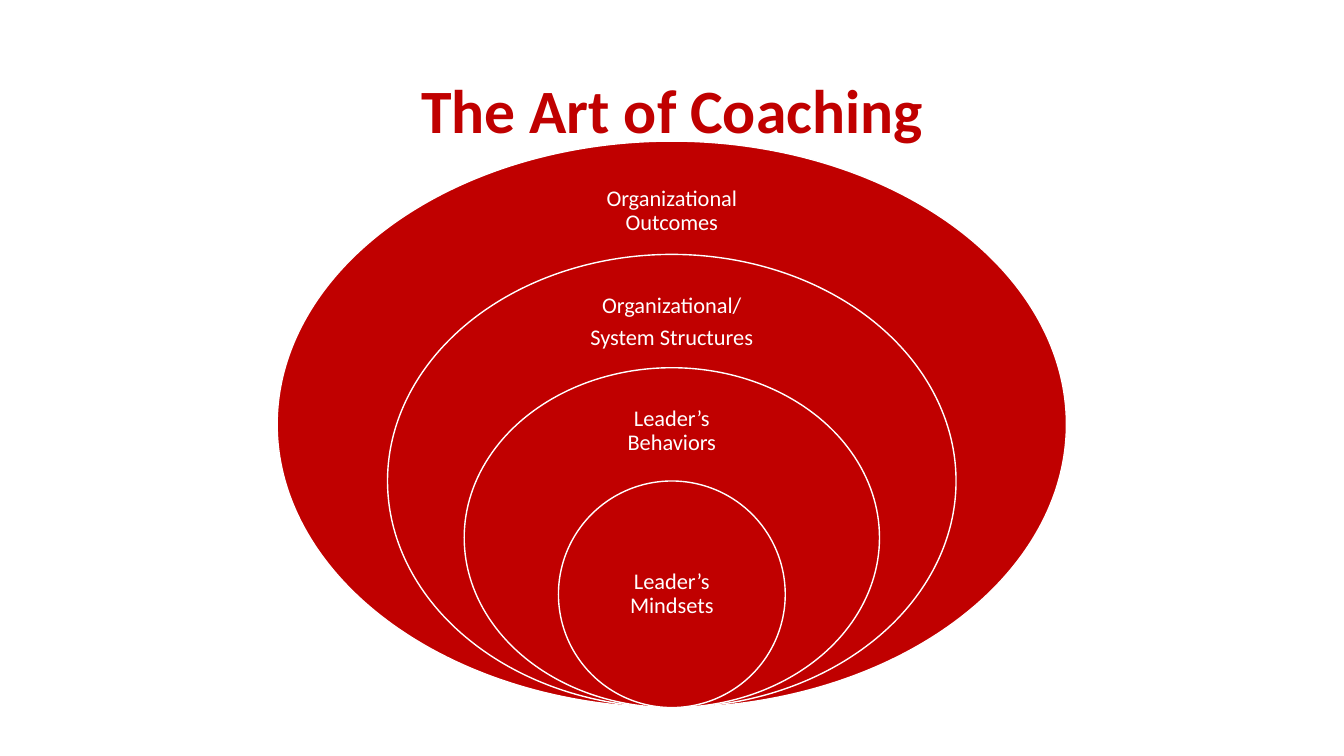
from collections import namedtuple

from pptx import Presentation
from pptx.dml.color import RGBColor
from pptx.enum.shapes import MSO_SHAPE
from pptx.enum.text import MSO_ANCHOR, PP_ALIGN
from pptx.util import Pt

PX = 9144
ELLIPSE = MSO_SHAPE.OVAL
MIDDLE = MSO_ANCHOR.MIDDLE
CENTER = PP_ALIGN.CENTER
RED = "C00000"
WHITE = "FFFFFF"

Box = namedtuple("Box", "left top width height")
Ring = namedtuple("Ring", "width label_top label_width label_height lines")

TITLE_FONT = {"name": "Calibri", "size": Pt(44), "bold": True}
LABEL_FONT = {"name": "Calibri", "size": Pt(16)}
TITLE_PARA = {"alignment": CENTER, "line_spacing": 0.9}
LABEL_PARA = {**TITLE_PARA, "space_after": Pt(5.6)}

RINGS = [
    Ring(783, 28, 219, 84, ["Organizational Outcomes"]),
    Ring(564, 27, 197, 81, ["Organizational/", "System Structures"]),
    Ring(412, 25, 192, 76, ["Leader’s Behaviors"]),
    Ring(225, 56, 159, 112, ["Leader’s Mindsets"]),
]


def color(value):
    return RGBColor.from_string(value)


def emu(box):
    return [round(length * PX) for length in box]


def apply(target, values):
    for name, value in values.items():
        setattr(target, name, value)


def add_text(shapes, box, lines, para_format, font_format, ink, inset):
    frame = shapes.add_textbox(*emu(box)).text_frame
    margins = {f"margin_{side}": inset * PX for side in ("left", "top", "right", "bottom")}
    apply(frame, {"word_wrap": True, "vertical_anchor": MIDDLE, **margins})
    for index, line in enumerate(lines):
        para = frame.add_paragraph() if index else frame.paragraphs[0]
        apply(para, para_format)
        span = para.add_run()
        span.text = line
        apply(span.font, font_format)
        span.font.color.rgb = color(ink)


def add_title(page, box):
    add_text(page.shapes, box, ["The Art of Coaching"], TITLE_PARA, TITLE_FONT, RED, 10)


def add_ellipse(shapes, box):
    ellipse = shapes.add_shape(ELLIPSE, *emu(box))
    ellipse.shadow.inherit = False
    ellipse.fill.solid()
    ellipse.fill.fore_color.rgb = color(RED)
    ellipse.line.color.rgb = color(WHITE)
    ellipse.line.width = Pt(1)


def add_nested_rings(page, box):
    shapes = page.shapes.add_group_shape().shapes
    center = box.left + box.width / 2
    step = box.height / (len(RINGS) + 1)
    for level, ring in enumerate(RINGS):
        top = box.top + level * step
        height = box.height - level * step
        add_ellipse(shapes, Box(center - ring.width / 2, top, ring.width, height))
        label = Box(center - ring.label_width / 2, top + ring.label_top,
                    ring.label_width, ring.label_height)
        add_text(shapes, label, ring.lines, LABEL_PARA, LABEL_FONT, WHITE, 14)


def main():
    deck = Presentation()
    deck.slide_width, deck.slide_height = 12192000, 750 * PX
    page = deck.slides.add_slide(deck.slide_layouts[6])
    add_title(page, Box(92, 40, 1150, 145))
    add_nested_rings(page, Box(275, 140, 783, 562))
    deck.save("out.pptx")


if __name__ == "__main__":
    main()
